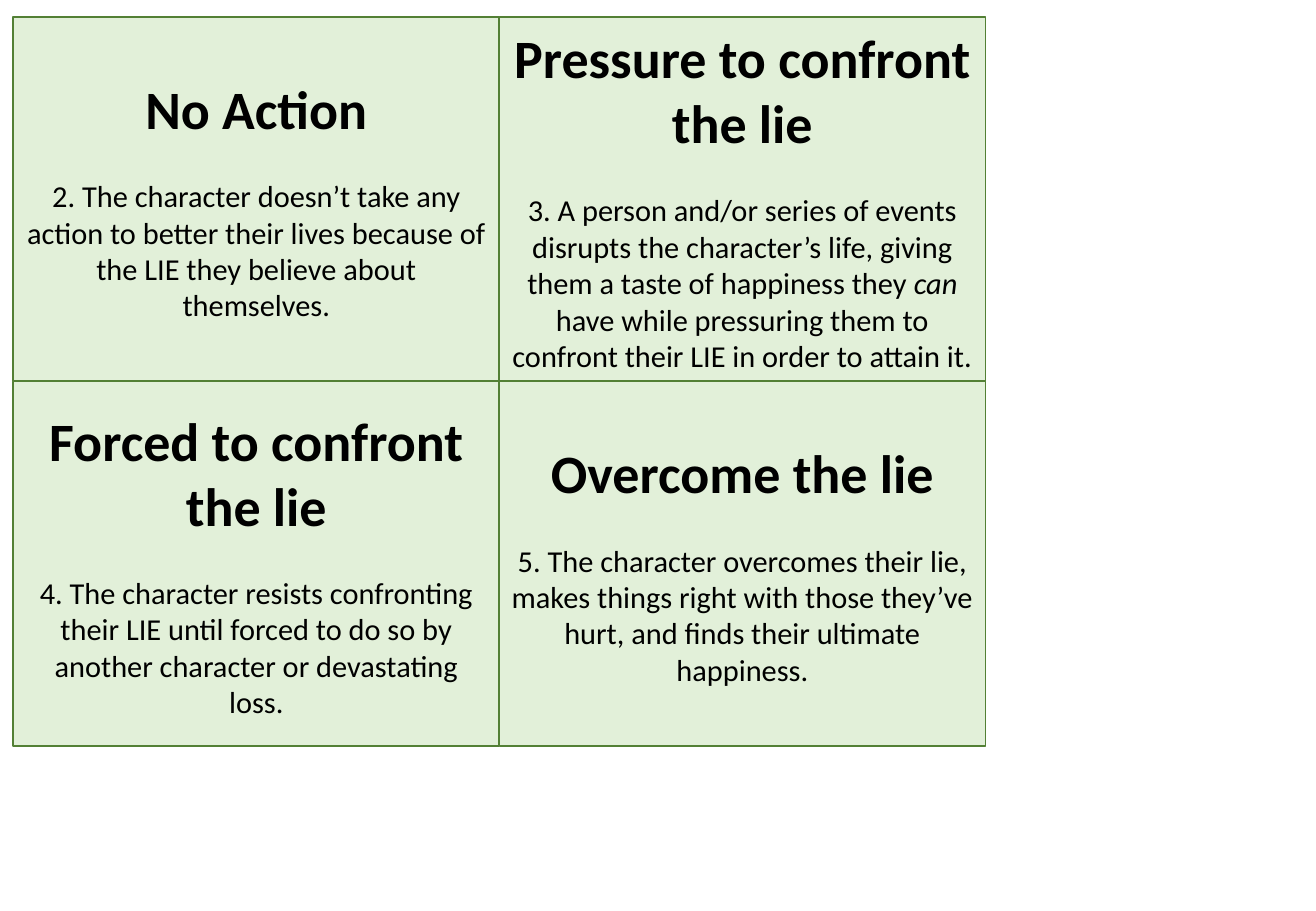
from pptx import Presentation
from pptx.dml.color import RGBColor
from pptx.enum.shapes import MSO_SHAPE as Shape
from pptx.enum.text import MSO_ANCHOR as Anchor, PP_ALIGN as Align
from pptx.util import Inches, Pt

MINT = RGBColor(0xE2, 0xF0, 0xD9)
GREEN = RGBColor(0x53, 0x80, 0x35)
BLACK = RGBColor(0, 0, 0)

LEFT, TOP, WIDTH, HEIGHT = 0.11, 0.14, 4, 3

STAGES = [
    ("No Action",
     ["2. The character doesn’t take any action to better their lives "
      "because of the LIE they believe about themselves."]),
    ("Pressure to confront the lie",
     ["3. A person and/or series of events disrupts the character’s life, "
      "giving them a taste of happiness they ",
      "can",
      " have while pressuring them to confront their LIE in order to attain it."]),
    ("Forced to confront the lie",
     ["4. The character resists confronting their LIE until forced to do so "
      "by another character or devastating loss."]),
    ("Overcome the lie",
     ["5. The character overcomes their lie, makes things right with those "
      "they’ve hurt, and finds their ultimate happiness."]),
]


def write(para, text, size=18, bold=False, italic=False):
    para.alignment = Align.CENTER
    run = para.add_run()
    run.text = text
    font = run.font
    font.name = "Calibri"
    font.size = Pt(size)
    font.bold = bold
    font.italic = italic
    font.color.rgb = BLACK


deck = Presentation()
deck.slide_width = Inches(10.83)
deck.slide_height = Inches(7.5)
slide = deck.slides.add_slide(deck.slide_layouts[6])

for num, (title, parts) in enumerate(STAGES):
    row, col = divmod(num, 2)
    card = slide.shapes.add_shape(
        Shape.RECTANGLE, Inches(LEFT + col * WIDTH), Inches(TOP + row * HEIGHT),
        Inches(WIDTH), Inches(HEIGHT))
    card.shadow.inherit = False
    card.fill.solid()
    card.fill.fore_color.rgb = MINT
    card.line.color.rgb = GREEN
    card.line.width = Pt(1)

    frame = card.text_frame
    frame.word_wrap = True
    frame.vertical_anchor = Anchor.MIDDLE
    write(frame.paragraphs[0], title, size=32, bold=True)
    body = frame.add_paragraph()
    body.space_before = Pt(22)
    for part in parts:
        write(body, part, italic=part == "can")

deck.save("out.pptx")
